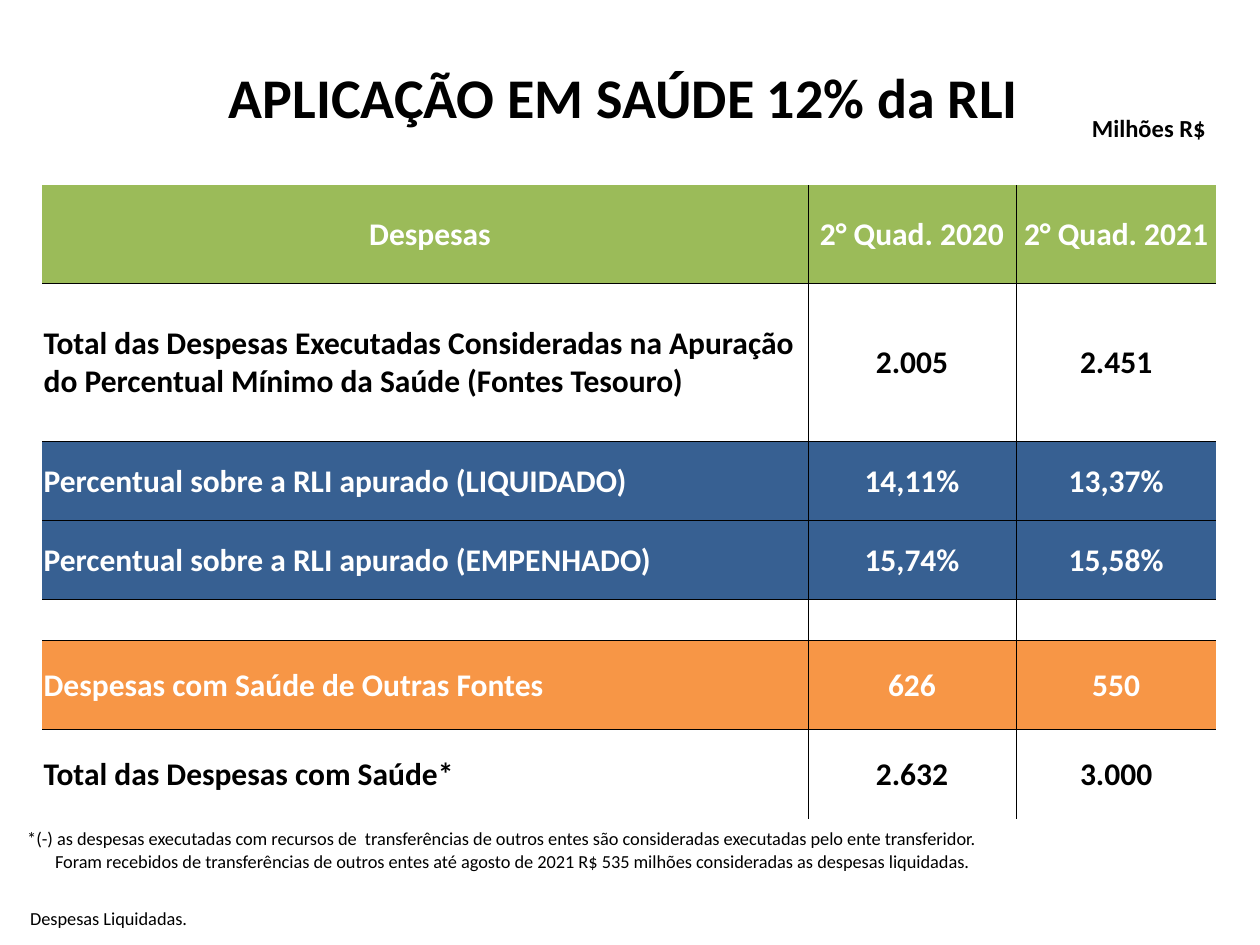
from typing import NamedTuple, Optional

from lxml import etree
from pptx import Presentation
from pptx import util as u
from pptx.dml.color import RGBColor
from pptx.enum import text as t
from pptx.oxml import ns

BLACK = RGBColor(0x00, 0x00, 0x00)
WHITE = RGBColor(0xFF, 0xFF, 0xFF)
GREEN = RGBColor(0x9B, 0xBB, 0x59)
BLUE = RGBColor(0x37, 0x60, 0x92)
ORANGE = RGBColor(0xF7, 0x96, 0x46)
FONT = "Calibri"
LEFT, MID = t.PP_ALIGN.LEFT, t.PP_ALIGN.CENTER


class Row(NamedTuple):
    high: float
    cells: tuple
    ink: RGBColor = BLACK
    fill: Optional[RGBColor] = None


class Note(NamedTuple):
    left: float
    top: float
    wide: float
    high: float
    lines: tuple


WIDTHS = (15.44, 4.19, 4.04)
ROWS = (
    Row(1.98, ("Despesas", "2° Quad. 2020", "2° Quad. 2021"), WHITE, GREEN),
    Row(3.18, ("Total das Despesas Executadas Consideradas na Apuração do "
               "Percentual Mínimo da Saúde (Fontes Tesouro)", "2.005", "2.451")),
    Row(1.6, ("Percentual sobre a RLI apurado (LIQUIDADO)", "14,11%", "13,37%"),
        WHITE, BLUE),
    Row(1.6, ("Percentual sobre a RLI apurado (EMPENHADO)", "15,74%", "15,58%"),
        WHITE, BLUE),
    Row(0.81, ("", "", "")),
    Row(1.8, ("Despesas com Saúde de Outras Fontes", "626", "550"), WHITE, ORANGE),
    Row(1.8, ("Total das Despesas com Saúde*", "2.632", "3.000")),
)
NOTES = (
    Note(0.3, 16.56, 24.92, 1.14, (
        "*(-) as despesas executadas com recursos de  transferências de outros "
        "entes são consideradas executadas pelo ente transferidor.",
        "Foram recebidos de transferências de outros entes até agosto de 2021 "
        "R$ 535 milhões consideradas as despesas liquidadas.")),
    Note(0.36, 18.16, 24.92, 0.7, ("Despesas Liquidadas.",)),
)


def write(para, words: str, *, size: float, ink: RGBColor = BLACK,
          bold: bool = True, align=MID, indent: float = 0) -> None:
    """Put formatted words in a paragraph."""
    if indent:
        para._p.get_or_add_pPr().set("marL", str(int(u.Cm(indent))))
    para.alignment = align
    if not words:
        return
    run = para.add_run()
    run.text = words
    font = run.font
    font.name, font.size, font.bold = FONT, u.Pt(size), bold
    font.color.rgb = ink


def place(shape, left: float, top: float, wide: float, high: float) -> None:
    shape.left, shape.top = u.Cm(left), u.Cm(top)
    shape.width, shape.height = u.Cm(wide), u.Cm(high)


def edge(cell, side: str, shown: bool) -> None:
    """Rule one side of a cell, or leave it bare."""
    line = etree.SubElement(cell._tc.get_or_add_tcPr(), ns.qn("a:ln" + side),
                            w=str(int(u.Pt(0.5))))
    if shown:
        fill = etree.SubElement(line, ns.qn("a:solidFill"))
        etree.SubElement(fill, ns.qn("a:srgbClr"), val=str(BLACK))
    else:
        etree.SubElement(line, ns.qn("a:noFill"))


def draw_grid(slide) -> None:
    rows, cols = len(ROWS), len(WIDTHS)
    grid = slide.shapes.add_table(
        rows, cols, u.Cm(0.85), u.Cm(3.73), u.Cm(sum(WIDTHS)),
        u.Cm(sum(row.high for row in ROWS))).table
    grid.first_row = grid.horz_banding = False
    for c, wide in enumerate(WIDTHS):
        grid.columns[c].width = u.Cm(wide)
    for r, row in enumerate(ROWS):
        grid.rows[r].height = u.Cm(row.high)
        for c, words in enumerate(row.cells):
            cell = grid.cell(r, c)
            cell.vertical_anchor = t.MSO_ANCHOR.MIDDLE
            cell.margin_left = u.Cm(0.23 if r == c == 0 else 0.03)
            cell.margin_right = cell.margin_top = u.Cm(0.03)
            cell.margin_bottom = 0
            # Only inner edges are ruled
            for side, shown in (("L", c > 0), ("R", c < cols - 1),
                                ("T", r > 0), ("B", r < rows - 1)):
                edge(cell, side, shown)
            if row.fill is None:
                cell.fill.background()
            else:
                cell.fill.solid()
                cell.fill.fore_color.rgb = row.fill
            write(cell.text_frame.paragraphs[0], words, size=18, ink=row.ink,
                  align=LEFT if c == 0 and r > 0 else MID)


def draw_note(slide, note: Note) -> None:
    box = slide.shapes.add_textbox(0, 0, 0, 0)
    place(box, *note[:4])
    frame = box.text_frame
    frame.word_wrap = True
    for i, line in enumerate(note.lines):
        para = frame.add_paragraph() if i else frame.paragraphs[0]
        write(para, line, size=10.5, bold=False, align=LEFT,
              indent=0.56 if i else 0)


def main() -> None:
    deck = Presentation()
    deck.slide_width, deck.slide_height = u.Cm(25.4), u.Cm(19.05)
    slide = deck.slides.add_slide(deck.slide_layouts[5])

    # Title
    title = slide.shapes.title
    place(title, 1.63, 0.89, 21.89, 2.08)
    title.text_frame.vertical_anchor = t.MSO_ANCHOR.MIDDLE
    write(title.text_frame.paragraphs[0], "APLICAÇÃO EM SAÚDE 12% da RLI", size=32)

    # Unit label
    unit = slide.shapes.add_textbox(0, 0, 0, 0)
    place(unit, 21.79, 2.34, 2.74, 0.53)
    frame = unit.text_frame
    frame.word_wrap = True
    frame.margin_left = frame.margin_right = 0
    frame.margin_top = frame.margin_bottom = 0
    frame.paragraphs[0].line_spacing = 0.9
    write(frame.paragraphs[0], "Milhões R$", size=14)

    # Table and footnotes
    draw_grid(slide)
    for note in NOTES:
        draw_note(slide, note)
    deck.save("out.pptx")


if __name__ == "__main__":
    main()
